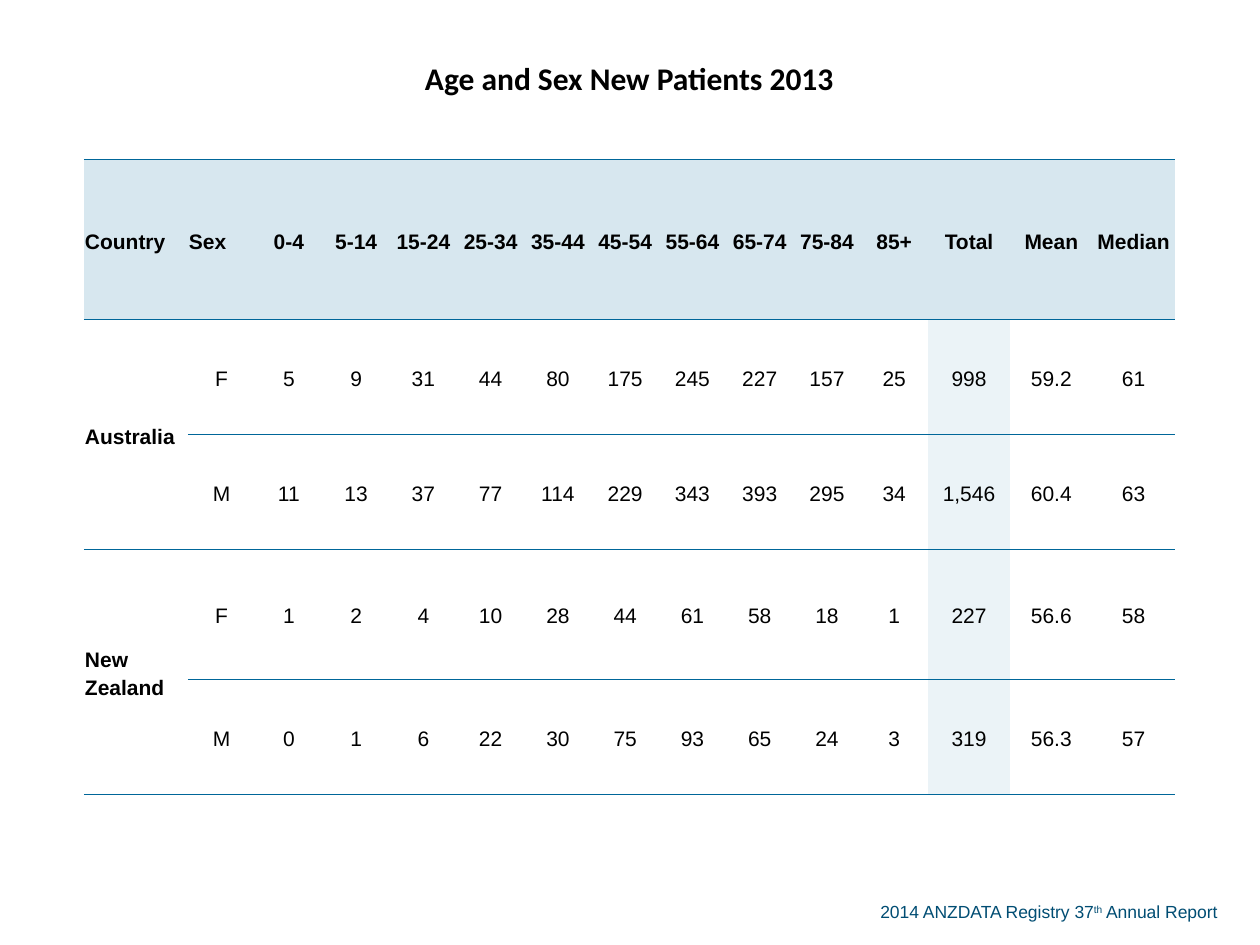
from dataclasses import dataclass

from lxml import etree
from pptx import Presentation
from pptx import util as u
from pptx.dml.color import RGBColor
from pptx.enum import text
from pptx.oxml.ns import qn

PX = 914400 // 126
BLACK = RGBColor(0x00, 0x00, 0x00)
RULE = RGBColor(0x00, 0x66, 0x99)
HEAD = RGBColor(0xD7, 0xE7, 0xEF)
TINT = RGBColor(0xEB, 0xF3, 0xF7)
NAVY = RGBColor(0x00, 0x4D, 0x73)
PLAIN = "{2D5ABB26-0587-4C30-8999-92F81FD0307C}"
LEFT, MID = text.PP_ALIGN.LEFT, text.PP_ALIGN.CENTER


@dataclass
class Band:
    width: int
    count: int


@dataclass
class Group:
    country: str
    women: str
    men: str


BANDS = [Band(104, 1), Band(740, 11), Band(247, 3)]
ROWS = [159, 160, 115, 115, 130, 115]
TITLE = "Age and Sex New Patients 2013"
LABELS = ("Country Sex 0-4 5-14 15-24 25-34 35-44 45-54 55-64 65-74 "
          "75-84 85+ Total Mean Median").split()
GROUPS = [
    Group("Australia",
          "F 5 9 31 44 80 175 245 227 157 25 998 59.2 61",
          "M 11 13 37 77 114 229 343 393 295 34 1,546 60.4 63"),
    Group("New Zealand",
          "F 1 2 4 10 28 44 61 58 18 1 227 56.6 58",
          "M 0 1 6 22 30 75 93 65 24 3 319 56.3 57"),
]
TOTAL = LABELS.index("Total")
TOPS, ENDS = (1, 2, 4), (0, 1, 3, 5)


def edge(cell, tag: str) -> None:
    line = etree.SubElement(cell._tc.get_or_add_tcPr(), qn(tag), w=str(u.Pt(0.5)))
    fill = etree.SubElement(line, qn("a:solidFill"))
    etree.SubElement(fill, qn("a:srgbClr"), val=str(RULE))


def frame(cell, top: bool, end: bool, fill: RGBColor | None) -> None:
    if top:
        edge(cell, "a:lnT")
    if end:
        edge(cell, "a:lnB")
    if fill is None:
        cell.fill.background()
    else:
        cell.fill.solid()
        cell.fill.fore_color.rgb = fill
    cell.margin_left = cell.margin_right = cell.margin_top = PX
    cell.margin_bottom = 0
    cell.vertical_anchor = text.MSO_ANCHOR.MIDDLE


def style(font, name: str, size: int, color: RGBColor, bold: bool = False) -> None:
    font.name, font.size, font.bold = name, u.Pt(size), bold
    font.color.rgb = color


def write(cell, words: str, align, bold: bool) -> None:
    para = cell.text_frame.paragraphs[0]
    para.text = words
    para.alignment = align
    para.line_spacing = 1.19
    para.space_after = u.Pt(14)
    style(para.runs[0].font, "Arial", 12, BLACK, bold)


def head(cell) -> None:
    para = cell.text_frame.paragraphs[0]
    para.text = TITLE
    para.alignment = MID
    style(para.runs[0].font, "Calibri", 18, BLACK, True)


def grid(slide) -> None:
    widths = [b.width * PX // b.count for b in BANDS for _ in range(b.count)]
    shape = slide.shapes.add_table(len(ROWS), len(widths), 84 * PX, 0,
                                   sum(widths), sum(ROWS) * PX)
    table = shape.table
    table.first_row = table.horz_banding = False
    table._tbl.tblPr.find(qn("a:tableStyleId")).text = PLAIN
    for col, width in zip(table.columns, widths):
        col.width = width
    for row, high in zip(table.rows, ROWS):
        row.height = high * PX

    table.cell(0, 0).merge(table.cell(0, len(widths) - 1))
    for top in (2, 4):
        table.cell(top, 0).merge(table.cell(top + 1, 0))
    for r in range(len(ROWS)):
        for c in range(len(widths)):
            fill = HEAD if r == 1 else TINT if r > 1 and c == TOTAL else None
            cell = table.cell(r, c)
            end = r in ENDS or cell.is_merge_origin
            frame(cell, r in TOPS, end, fill)

    head(table.cell(0, 0))
    for c, label in enumerate(LABELS):
        write(table.cell(1, c), label, LEFT if c < 2 else MID, True)
    for i, group in enumerate(GROUPS):
        top = 2 + 2 * i
        write(table.cell(top, 0), group.country, LEFT, True)
        for r, line in enumerate((group.women, group.men), top):
            for c, value in enumerate(line.split(), 1):
                write(table.cell(r, c), value, MID, False)


def footer(slide) -> None:
    box = slide.shapes.add_textbox(868 * PX, 895 * PX, 377 * PX, 34 * PX)
    body = box.text_frame
    body.word_wrap = True
    body.auto_size = text.MSO_AUTO_SIZE.SHAPE_TO_FIT_TEXT
    para = body.paragraphs[0]
    for words in ("2014 ANZDATA Registry 37", "th", " Annual Report"):
        run = para.add_run()
        run.text = words
        style(run.font, "Arial", 10, NAVY)
    para.runs[1]._r.get_or_add_rPr().set("baseline", "30000")


def main() -> None:
    deck = Presentation()
    deck.slide_width, deck.slide_height = u.Inches(10), u.Inches(7.5)
    slide = deck.slides.add_slide(deck.slide_layouts[6])
    footer(slide)
    grid(slide)
    deck.save("out.pptx")


if __name__ == "__main__":
    main()
